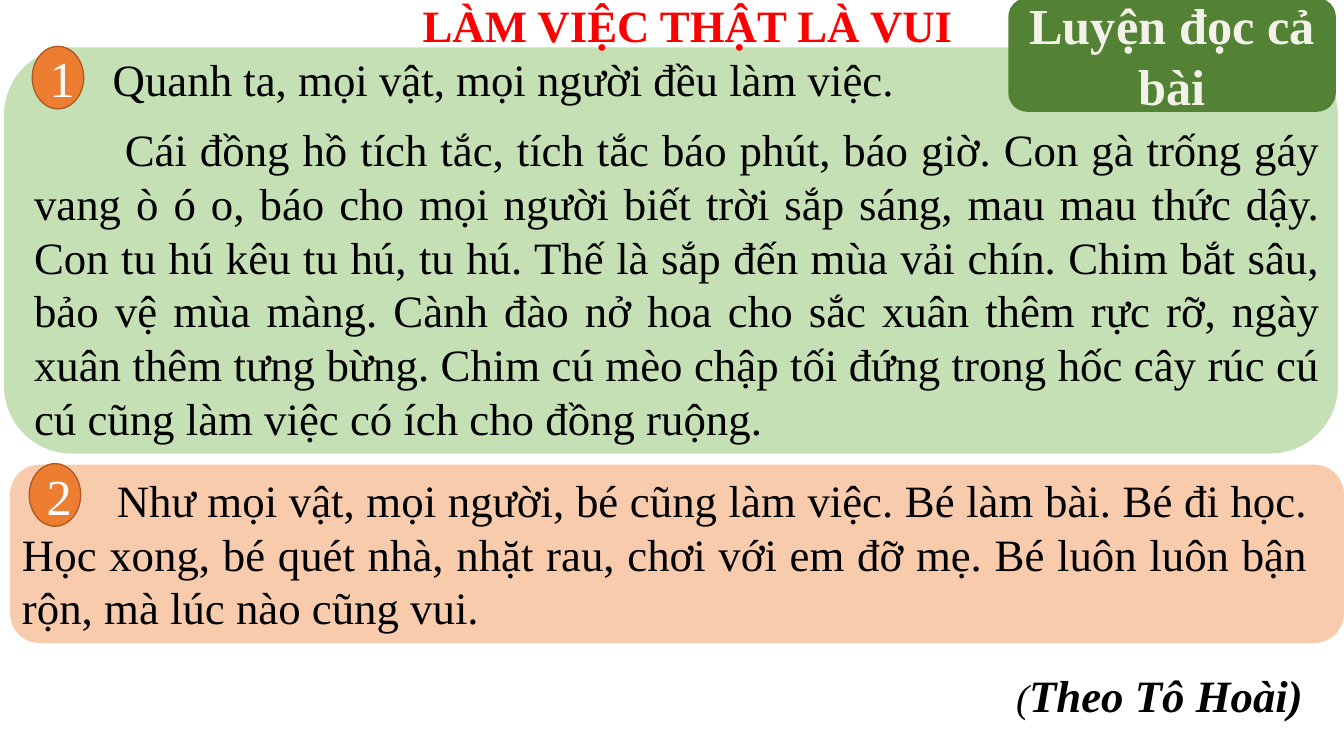
import pptx
import pptx.util
from pptx.dml.color import RGBColor
from pptx.enum.shapes import MSO_SHAPE
from pptx.enum.text import MSO_ANCHOR, PP_ALIGN
from pptx.util import Inches, Pt

FONT = "Times New Roman"
BLACK = RGBColor(0x00, 0x00, 0x00)
WHITE = RGBColor(0xFF, 0xFF, 0xFF)
RED = RGBColor(0xFF, 0x00, 0x00)
CREAM = RGBColor(0xF2, 0xF2, 0xE9)
PEACH = RGBColor(0xF8, 0xCB, 0xAD)
LIGHT_GREEN = RGBColor(0xC5, 0xE0, 0xB4)
DARK_GREEN = RGBColor(0x54, 0x82, 0x35)
ORANGE = RGBColor(0xED, 0x7D, 0x31)
BROWN = RGBColor(0xAF, 0x5C, 0x24)

LEFT, CENTER, JUSTIFY = PP_ALIGN.LEFT, PP_ALIGN.CENTER, PP_ALIGN.JUSTIFY
BODY = {"size": Pt(32), "color": BLACK}
TITLE = {"size": Pt(32), "color": RED, "bold": True}
OPENING = {"size": Pt(28), "color": BLACK, "italic": True}
SOURCE = {"size": Pt(32), "color": BLACK, "italic": True, "bold": True}
BADGE = {"size": Pt(36), "color": WHITE}
TASK = {"size": Pt(36), "color": CREAM, "bold": True}

# Content: panels are (left, top, width, height), fill
panels = [
    ((0.10, 4.61, 13.23, 1.77), PEACH),
    ((0.04, 0.47, 13.23, 4.03), LIGHT_GREEN),
]

# Reading passages: place, then (text, alignment, first-line indent)
passages = [
    ((0.21, 0.46, 13.04, 4.04), [
        ("Quanh ta, mọi vật, mọi người đều làm việc.", LEFT, 0.78),
        ("Cái đồng hồ tích tắc, tích tắc báo phút, báo giờ. Con gà trống gáy "
         "vang ò ó o, báo cho mọi người biết trời sắp sáng, mau mau thức dậy. "
         "Con tu hú kêu tu hú, tu hú. Thế là sắp đến mùa vải chín. Chim bắt sâu, "
         "bảo vệ mùa màng. Cành đào nở hoa cho sắc xuân thêm rực rỡ, ngày "
         "xuân thêm tưng bừng. Chim cú mèo chập tối đứng trong hốc cây rúc cú "
         "cú cũng làm việc có ích cho đồng ruộng.", JUSTIFY, 0.9),
    ]),
    ((0.09, 4.64, 13.04, 2.36), [
        ("Như mọi vật, mọi người, bé cũng làm việc. Bé làm bài. Bé đi học. "
         "Học xong, bé quét nhà, nhặt rau, chơi với em đỡ mẹ. Bé luôn luôn bận "
         "rộn, mà lúc nào cũng vui.", JUSTIFY, 0.94),
    ]),
]

# Title and author: place, alignment, runs
captions = [
    ((1.26, -0.07, 11.12, 0.64), CENTER, [("LÀM VIỆC THẬT LÀ VUI", TITLE)]),
    ((9.98, 6.57, 3.27, 1.11), LEFT, [("(", OPENING), ("Theo Tô Hoài)", SOURCE)]),
]

badges = [("2", 0.29, 4.60), ("1", 0.32, 0.46)]
badge_size = (0.51, 0.62)
task_label = ("Luyện đọc cả bài", (10, -0.02, 3.25, 1.13))

deck = pptx.Presentation()
deck.slide_width, deck.slide_height = Inches(13.33), Inches(7.5)
slide = deck.slides.add_slide(deck.slide_layouts[6])


def add_run(paragraph, text, style):
    run = paragraph.add_run()
    run.text = text
    run.font.name = FONT
    for key, value in style.items():
        if key == "color":
            run.font.color.rgb = value
        else:
            setattr(run.font, key, value)


def add_block(kind, place, fill, line=None):
    block = slide.shapes.add_shape(kind, *map(Inches, place))
    block.shadow.inherit = False
    block.fill.solid()
    block.fill.fore_color.rgb = fill
    if line is None:
        block.line.fill.background()
    else:
        block.line.color.rgb = line
        block.line.width = Pt(1)
    return block


def label(block, text, style):
    frame = block.text_frame
    frame.word_wrap = True
    frame.vertical_anchor = MSO_ANCHOR.MIDDLE
    frame.paragraphs[0].alignment = CENTER
    add_run(frame.paragraphs[0], text, style)


def add_text_frame(place):
    frame = slide.shapes.add_textbox(*map(Inches, place)).text_frame
    frame.word_wrap = True
    return frame


# Coloured panels
for place, fill in panels:
    add_block(MSO_SHAPE.ROUNDED_RECTANGLE, place, fill)

# Reading passages
for place, paragraphs in passages:
    frame = add_text_frame(place)
    frame.margin_right = Inches(0.15)
    for index, (text, alignment, indent) in enumerate(paragraphs):
        paragraph = frame.add_paragraph() if index else frame.paragraphs[0]
        paragraph.alignment = alignment
        paragraph.space_after = Pt(12)
        properties = paragraph._p.get_or_add_pPr()
        for key, value in {"marL": 0.03, "indent": indent}.items():
            properties.set(key, str(Inches(value)))
        add_run(paragraph, text, BODY)

# Title and author
for place, alignment, runs in captions:
    paragraph = add_text_frame(place).paragraphs[0]
    paragraph.alignment = alignment
    for text, style in runs:
        add_run(paragraph, text, style)

# Numbered badges and task label
for number, left, top in badges:
    badge = add_block(MSO_SHAPE.OVAL, (left, top, *badge_size), ORANGE, BROWN)
    label(badge, number, BADGE)

task_text, task_place = task_label
label(add_block(MSO_SHAPE.ROUNDED_RECTANGLE, task_place, DARK_GREEN), task_text, TASK)

deck.save("out.pptx")
